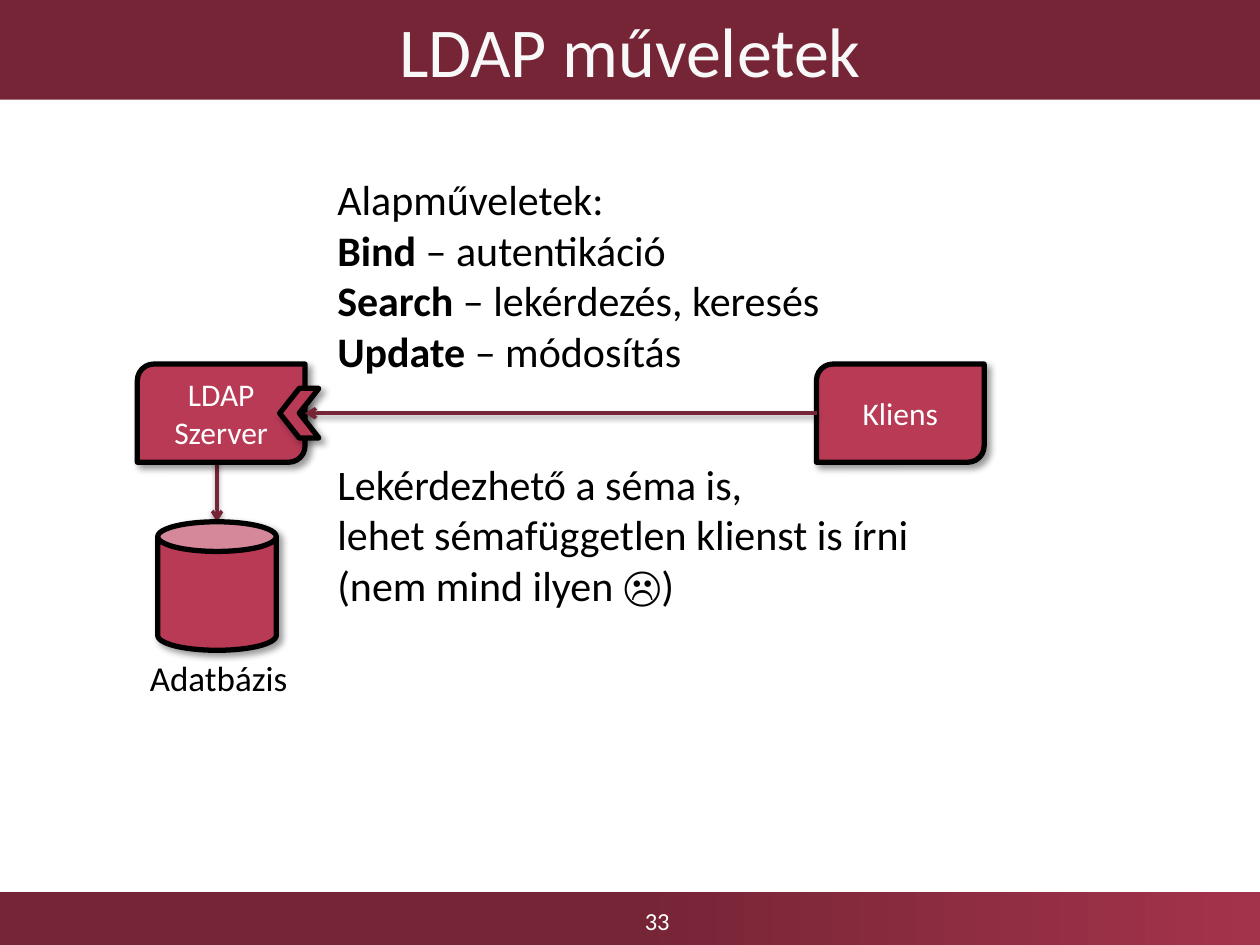
from lxml import etree
from pptx import Presentation
from pptx.dml.color import RGBColor
from pptx.enum import shapes, text
from pptx.oxml import ns
from pptx.util import Cm, Pt

WINE = RGBColor(0x76, 0x25, 0x36)
WINE_LIGHT = RGBColor(0xA3, 0x33, 0x4B)
ROSE = RGBColor(0xB8, 0x3A, 0x55)
BLACK = RGBColor(0, 0, 0)
WHITE = RGBColor(0xFF, 0xFF, 0xFF)
OFF_WHITE = RGBColor(0xF8, 0xF8, 0xF8)
FONT = "Calibri"
SLIDE_W, SLIDE_H = 25.4, 19.05

# Content: a paragraph is a list of (text, bold) runs
TITLE = "LDAP műveletek"
PAGE = "33"
SERVER = [[("LDAP", False)], [("Szerver", False)]]
CLIENT = [[("Kliens", False)]]
DATABASE = [[("Adatbázis", False)]]
OPERATIONS = [
    [("Alapműveletek:", False)],
    [("Bind", True), (" – autentikáció", False)],
    [("Search", True), (" – lekérdezés, keresés", False)],
    [("Update", True), (" – módosítás", False)],
]
SCHEMA = [
    [("Lekérdezhető a séma is,\nlehet sémafüggetlen klienst is írni", False)],
    [("(nem mind ilyen ☹)", False)],
]

# Layout in cm
BOX_W, BOX_H, BOX_TOP = 3.38, 1.98, 7.34
SERVER_X, CLIENT_X = 2.77, 16.46
CAN_X, CAN_Y, CAN_W, CAN_H = 3.18, 10.52, 2.39, 2.59
TEXT_X = 6.55
FOOTER_H = 1.07
# Shadows: opacity %, blur pt, distance pt, direction in degrees
SHAPE_SHADOW = (40, 4, 3, 45)
LINE_SHADOW = (38, 3.1, 1.6, 90)


def add_shadow(sp, opacity, blur, dist, angle):
    effects = etree.SubElement(sp._element.spPr, ns.qn("a:effectLst"))
    shadow = etree.SubElement(
        effects, ns.qn("a:outerShdw"), blurRad=str(Pt(blur)), dist=str(Pt(dist)),
        dir=str(angle * 60000), rotWithShape="0")
    color = etree.SubElement(shadow, ns.qn("a:srgbClr"), val=str(BLACK))
    etree.SubElement(color, ns.qn("a:alpha"), val=str(opacity * 1000))


def write(sp, paragraphs, size, color, align=text.PP_ALIGN.LEFT):
    tf = sp.text_frame
    for i, runs in enumerate(paragraphs):
        p = tf.paragraphs[0] if i == 0 else tf.add_paragraph()
        p.alignment = align
        p.font.name, p.font.size, p.font.color.rgb = FONT, Pt(size), color
        for words, bold in runs:
            for j, line in enumerate(words.split("\n")):
                if j:
                    p.add_line_break()
                r = p.add_run()
                r.text = line
                if bold:
                    r.font.bold = True


def add_node(s, kind, x, y, w, h, paragraphs=()):
    sp = s.shapes.add_shape(kind, Cm(x), Cm(y), Cm(w), Cm(h))
    sp.fill.solid()
    sp.fill.fore_color.rgb = ROSE
    sp.line.color.rgb = BLACK
    sp.line.width = Pt(3)
    add_shadow(sp, *SHAPE_SHADOW)
    sp.text_frame.vertical_anchor = text.MSO_ANCHOR.MIDDLE
    write(sp, paragraphs, 18, WHITE, text.PP_ALIGN.CENTER)
    return sp


def add_arrow(s, x1, y1, x2, y2):
    line = s.shapes.add_connector(
        shapes.MSO_CONNECTOR.STRAIGHT, Cm(x1), Cm(y1), Cm(x2), Cm(y2))
    line.line.color.rgb = WINE
    line.line.width = Pt(2)
    etree.SubElement(line.line._get_or_add_ln(), ns.qn("a:tailEnd"), type="arrow")
    add_shadow(line, *LINE_SHADOW)


def add_label(s, x, y, w, h, paragraphs, size):
    sp = s.shapes.add_textbox(Cm(x), Cm(y), Cm(w), Cm(h))
    sp.text_frame.word_wrap = False
    sp.text_frame.auto_size = text.MSO_AUTO_SIZE.SHAPE_TO_FIT_TEXT
    write(sp, paragraphs, size, BLACK)


def main():
    prs = Presentation()
    prs.slide_width, prs.slide_height = Cm(SLIDE_W), Cm(SLIDE_H)
    s = prs.slides.add_slide(prs.slide_layouts[5])
    kinds = shapes.MSO_SHAPE

    # Title band
    title = s.shapes.title
    title.left, title.top, title.width, title.height = Cm(0), Cm(0), Cm(SLIDE_W), Cm(2.01)
    title.fill.solid()
    title.fill.fore_color.rgb = WINE
    title.text_frame.auto_size = text.MSO_AUTO_SIZE.NONE
    title.text_frame.vertical_anchor = text.MSO_ANCHOR.MIDDLE
    write(title, [[(TITLE, False)]], 40, OFF_WHITE, text.PP_ALIGN.CENTER)

    # Footer band and page number
    footer = s.shapes.add_shape(
        kinds.RECTANGLE, Cm(0), Cm(SLIDE_H - FOOTER_H), Cm(SLIDE_W), Cm(FOOTER_H))
    footer.shadow.inherit = False
    footer.line.fill.background()
    footer.fill.gradient()
    footer.fill.gradient_angle = 0
    stops = ((0.5, WINE), (1, WINE_LIGHT))
    for stop, (position, color) in zip(footer.fill.gradient_stops, stops):
        stop.position = position
        stop.color.rgb = color
    page = s.shapes.add_textbox(Cm(9.12), Cm(18.06), Cm(8.26), Cm(0.99))
    page.text_frame.word_wrap = True
    page.text_frame.vertical_anchor = text.MSO_ANCHOR.MIDDLE
    write(page, [[(PAGE, False)]], 14, WHITE, text.PP_ALIGN.CENTER)

    # Database below the server
    can_mid = CAN_X + CAN_W / 2
    add_arrow(s, can_mid, 9.12, can_mid, CAN_Y)
    add_node(s, kinds.CAN, CAN_X, CAN_Y, CAN_W, CAN_H)
    add_label(s, SERVER_X, CAN_Y + CAN_H, 3.33, 1.12, DATABASE, 20)

    # Server, its interface and the client
    mid_y = BOX_TOP + BOX_H / 2
    add_node(s, kinds.ROUND_2_DIAG_RECTANGLE, SERVER_X, BOX_TOP, BOX_W, BOX_H, SERVER)
    chevron = add_node(s, kinds.CHEVRON, 5.64, mid_y - 0.5, 0.79, 1)
    chevron._element.spPr.xfrm.set("flipH", "1")
    add_node(s, kinds.ROUND_2_DIAG_RECTANGLE, CLIENT_X, BOX_TOP, BOX_W, BOX_H, CLIENT)
    add_arrow(s, CLIENT_X, mid_y, SERVER_X + BOX_W, mid_y)

    # Explanations
    add_label(s, TEXT_X, 3.38, 10.34, 4.37, OPERATIONS, 24)
    add_label(s, TEXT_X, 9.12, 12.14, 3.33, SCHEMA, 24)

    prs.save("out.pptx")


if __name__ == "__main__":
    main()
